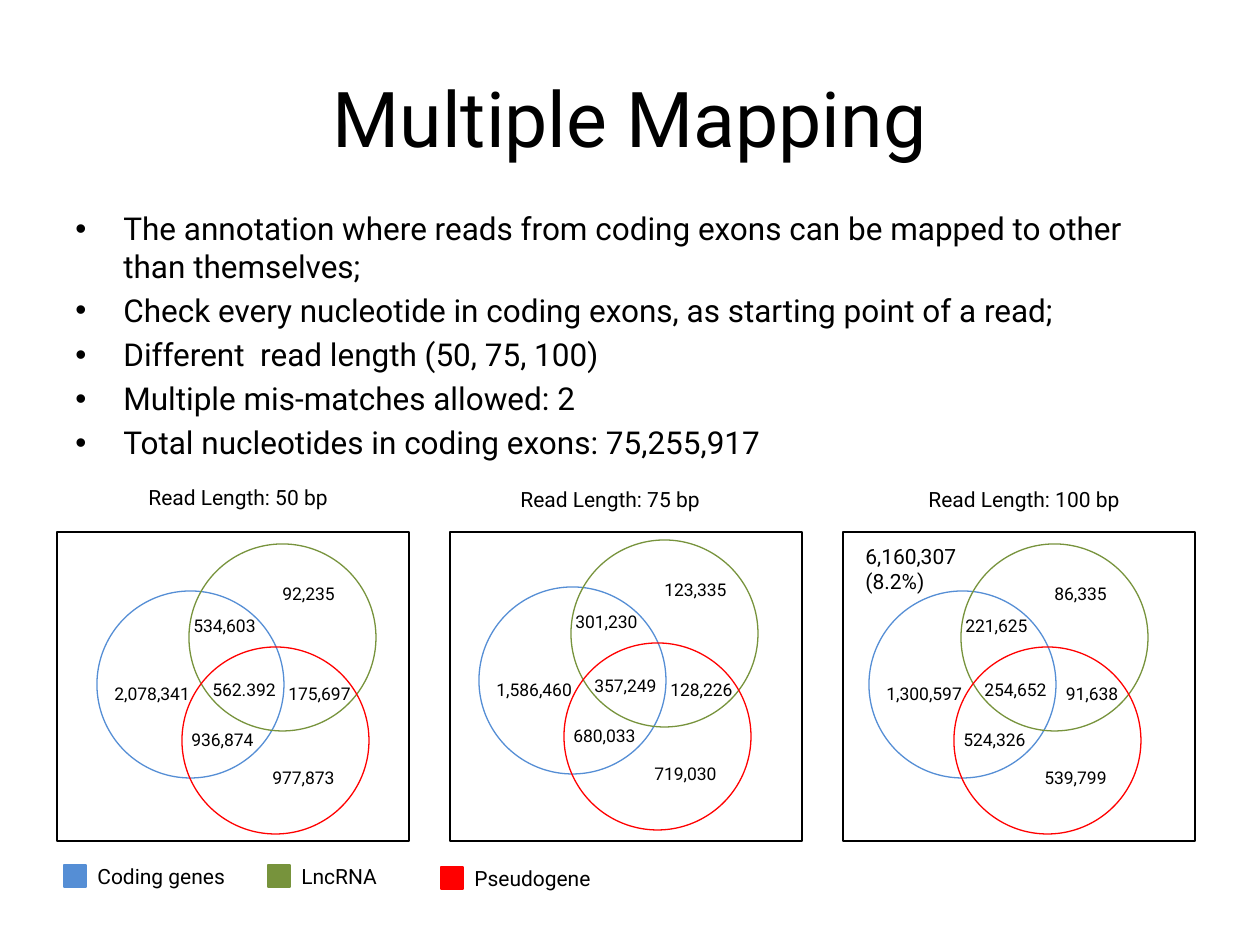
"""Build the Multiple Mapping slide with three read-length Venn diagrams."""
from lxml.etree import SubElement
from pptx import Presentation
from pptx.dml.color import RGBColor
from pptx.enum.shapes import MSO_SHAPE as SHAPE
from pptx.enum.text import MSO_ANCHOR as ANCHOR, PP_ALIGN as ALIGN
from pptx.oxml.ns import qn
from pptx.util import Pt

PX = 914400 / 126
FONT = "Roboto"
BLACK, BLUE, GREEN, RED = "000000", "558ED5", "77933C", "FF0000"

BULLETS = [
    "The annotation where reads from coding exons can be mapped to other than themselves;",
    "Check every nucleotide in coding exons, as starting point of a read;",
    "Different  read length (50, 75, 100)",
    "Multiple mis-matches allowed: 2",
    "Total nucleotides in coding exons: 75,255,917",
]

FRAME_LEFT, FRAME_TOP, FRAME_STEP = 57, 532, 393
FRAME_SIZE = (352, 309)
CIRCLE = 187
CIRCLES = [(0, 0, BLUE), (92, -47, GREEN), (85, 56, RED)]

LABEL_WIDTHS = {6: 79, 7: 90, 9: 104}
COUNT_SPOTS = {
    "all": (103, 82, 0),
    "coding_lncrna": (84, 18, 0),
    "coding_pseudogene": (82, 132, 0),
    "lncrna_pseudogene": (179, 86, 0.5),
    "coding": (5, 86, 0),
    "lncrna": (173, -14, 0),
    "pseudogene": (163, 170, 0),
}

VENNS = [
    {"origin": (97, 591), "heading": ("Read Length: 50 bp", 136, 478, 213),
     "counts": ["562.392", "534,603", "936,874", "175,697", "2,078,341", "92,235", "977,873"]},
    {"origin": (479, 587), "heading": ("Read Length: 75 bp", 508, 480, 213),
     "counts": ["357,249", "301,230", "680,033", "128,226", "1,586,460", "123,335", "719,030"]},
    {"origin": (869, 591), "heading": ("Read Length: 100 bp", 916, 480, 223),
     "counts": ["254,652", "221,625", "524,326", "91,638", "1,300,597", "86,335", "539,799"]},
]

LEGEND = [
    ("Coding genes", BLUE, 64, 865, 156),
    ("LncRNA", GREEN, 268, 865, 107),
    ("Pseudogene", RED, 441, 867, 145),
]


def px(n):
    """Turn pixels into EMU."""
    return round(n * PX)


def color(hex_value):
    """Turn a hex string into a colour."""
    return RGBColor.from_string(hex_value)


def apply(obj, values):
    """Set each attribute from a dict of format values."""
    for name, value in values.items():
        setattr(obj, name, value)


def write(tf, lines, size, **paragraph_format):
    """Fill a text frame with one formatted paragraph per line."""
    for i, line in enumerate(lines):
        p = tf.paragraphs[0] if i == 0 else tf.add_paragraph()
        apply(p, paragraph_format)
        r = p.add_run()
        r.text = line
        apply(r.font, {"name": FONT, "size": Pt(size)})
        r.font.color.rgb = color(BLACK)


def add_text(slide, lines, x, y, w, h, size, wrap=False, **paragraph_format):
    """Add a text box and return its text frame."""
    tf = slide.shapes.add_textbox(*map(px, (x, y, w, h))).text_frame
    tf.word_wrap = wrap
    write(tf, lines, size, **paragraph_format)
    return tf


def add_outline(slide, kind, x, y, w, h, line, fill=None):
    """Add a thin-lined preset shape with an optional fill."""
    sp = slide.shapes.add_shape(kind, *map(px, (x, y, w, h)))
    sp.shadow.inherit = False
    if fill:
        sp.fill.solid()
        sp.fill.fore_color.rgb = color(fill)
    else:
        sp.fill.background()
    sp.line.color.rgb = color(line)
    sp.line.width = Pt(0.75)


def add_title(slide, text):
    """Place and format the title placeholder."""
    sp = slide.shapes.title
    apply(sp, dict(zip(("left", "top", "width", "height"), map(px, (63, 38, 1134, 157)))))
    sp.text_frame.vertical_anchor = ANCHOR.MIDDLE
    write(sp.text_frame, [text], 44, alignment=ALIGN.CENTER)


def add_bullets(slide, lines):
    """Add the bulleted list with hanging indents."""
    tf = add_text(slide, lines, 63, 203, 1134, 257, 18, wrap=True, space_before=Pt(3.6))
    for p in tf.paragraphs:
        pPr = p._p.get_or_add_pPr()
        pPr.set("marL", str(px(48)))
        pPr.set("indent", str(-px(48)))
        SubElement(pPr, qn("a:buFont")).set("typeface", "Arial")
        SubElement(pPr, qn("a:buChar")).set("char", "•")


def add_venn(slide, origin, heading, counts):
    """Add three overlapping circles with their counts and heading."""
    left, top = origin
    for dx, dy, line in CIRCLES:
        add_outline(slide, SHAPE.OVAL, left + dx, top + dy, CIRCLE, CIRCLE, line)
    for (dx, dy, slack), count in zip(COUNT_SPOTS.values(), counts):
        w = LABEL_WIDTHS[len(count)]
        x = left + dx + slack * (LABEL_WIDTHS[7] - w)
        add_text(slide, [count], x, top + dy, w, 34, 10)
    text, x, y, w = heading
    add_text(slide, [text], x, y, w, 38, 12)


def add_legend_entry(slide, label, fill, x, y, w):
    """Add a colour square and its label."""
    add_outline(slide, SHAPE.RECTANGLE, x, y, 22, 22, fill, fill)
    add_text(slide, [label], x + 21, y - 8, w, 38, 12)


def main():
    """Build and save the slide."""
    prs = Presentation()
    apply(prs, {"slide_width": px(1260), "slide_height": px(945)})
    slide = prs.slides.add_slide(prs.slide_layouts[5])
    add_title(slide, "Multiple Mapping")
    add_bullets(slide, BULLETS)
    for i, venn in enumerate(VENNS):
        add_outline(slide, SHAPE.RECTANGLE, FRAME_LEFT + i * FRAME_STEP, FRAME_TOP,
                    *FRAME_SIZE, BLACK)
        add_venn(slide, **venn)
    add_text(slide, ["6,160,307", "(8.2%)"], 853, 537, 120, 63, 12)
    for entry in LEGEND:
        add_legend_entry(slide, *entry)
    prs.save("out.pptx")


if __name__ == "__main__":
    main()
